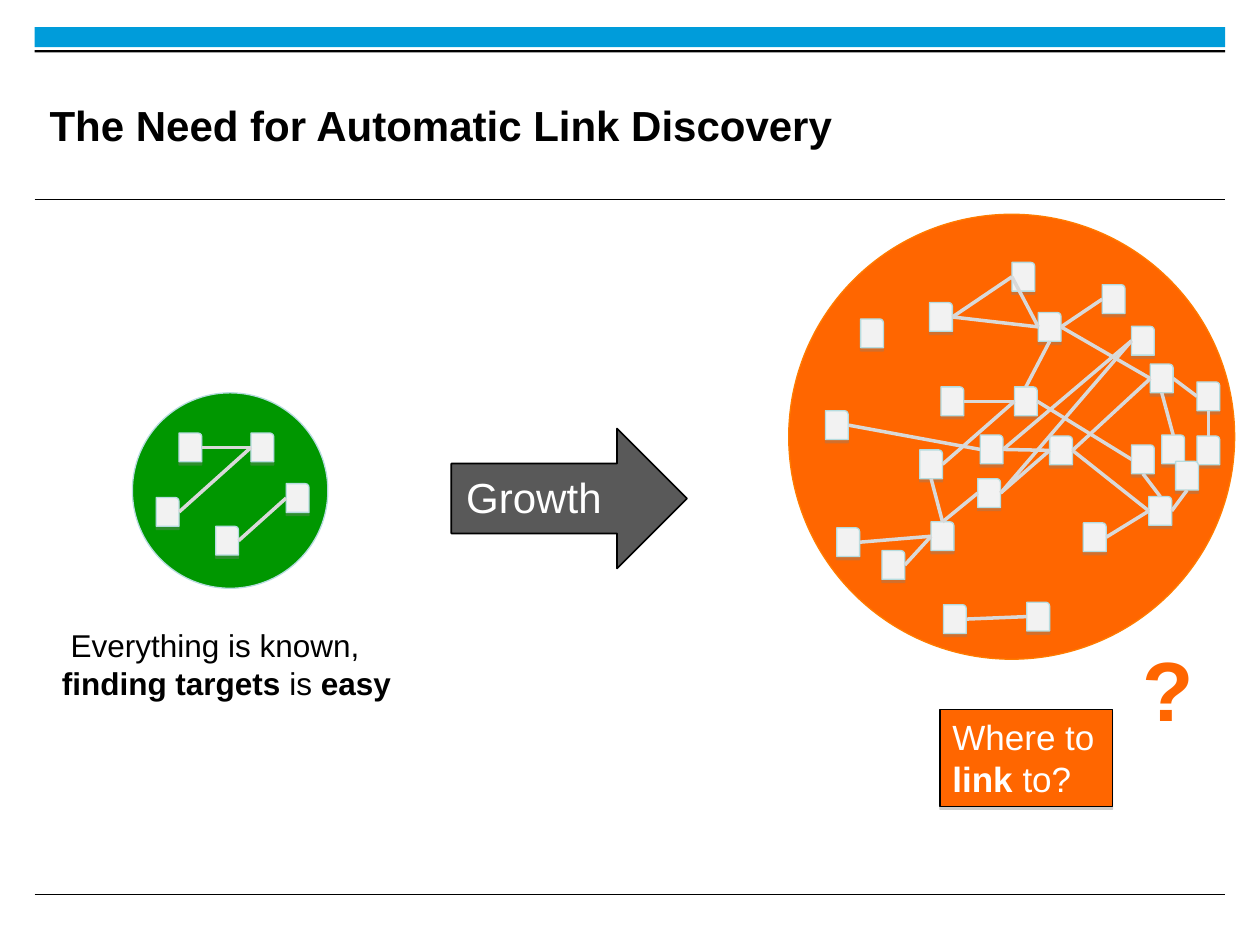
from lxml import etree
from pptx import Presentation
from pptx import util as u
from pptx.dml.color import RGBColor
from pptx.enum import shapes, text
from pptx.oxml import ns

SITES = {"t": 0, "l": 1, "b": 2, "r": 3}
KNOWN_PAGES = {"a": (2.39, 0.81), "b": (1.68, 2.69), "c": (0.48, 2.11),
               "d": (3.1, 1.83), "e": (0.94, 0.81)}
KNOWN_LINKS = "er-al cr-al br-dl"
GROWN_PAGES = {
    "a": (4.55, 3.48), "b": (3.81, 5.33), "c": (2.64, 4.75), "d": (5.26, 4.47),
    "e": (3.07, 3.48), "f": (3.86, 4.45), "g": (5.94, 6.22), "h": (8.23, 3.38),
    "i": (2.84, 1.78), "j": (6.91, 2.26), "k": (3.12, 7.87), "l": (6.32, 1.42),
    "m": (7.29, 3.02), "n": (6.91, 4.65), "o": (5.03, 1.98), "p": (4.5, 0.97),
    "q": (4.8, 7.82), "r": (7.52, 4.45), "s": (8.23, 4.47), "t": (1.45, 2.11),
    "u": (7.26, 5.69), "v": (7.8, 4.98), "w": (2.87, 6.2), "x": (0.74, 3.96),
    "y": (1.88, 6.78), "z": (0.97, 6.32)}
GROWN_LINKS = ("er-al cr-al br-dl ut-nb fr-dl dr-ul or-ll ir-ol ob-at vb-ur "
               "mr-hl rt-mb st-hb kr-ql yr-wl zr-wl wt-cb wt-bl xr-fl fr-jl "
               "jl-br gr-ul pl-ir ml-or ar-nl pl-ol dr-ml")


def rgb(color):
    """Turn a hex string into a colour."""
    return RGBColor.from_string(color)


def add_shape(s, kind, box, fill, line=None, width=0.75):
    """Add a flat preset shape."""
    sp = s.shapes.add_shape(kind, *map(u.Cm, box))
    sp.shadow.inherit = False
    sp.fill.solid()
    sp.fill.fore_color.rgb = rgb(fill)
    if line:
        sp.line.color.rgb = rgb(line)
        sp.line.width = u.Pt(width)
    else:
        sp.line.fill.background()
    return sp


def add_shadow(sp, points, opacity):
    """Give a flat shape a grey shadow below it."""
    effects = sp._element.spPr.find(ns.qn("a:effectLst"))
    shadow = etree.SubElement(effects, ns.qn("a:outerShdw"), blurRad="0",
                              dist=str(u.Pt(points)), dir="5400000", rotWithShape="0")
    color = etree.SubElement(shadow, ns.qn("a:srgbClr"), val="808080")
    etree.SubElement(color, ns.qn("a:alpha"), val=str(opacity * 1000))


def add_line(s, start, end, color, width):
    """Add a straight connector without a shadow."""
    ends = map(u.Cm, (*start, *end))
    cxn = s.shapes.add_connector(shapes.MSO_CONNECTOR.STRAIGHT, *ends)
    cxn.line.color.rgb = rgb(color)
    cxn.line.width = u.Pt(width)
    etree.SubElement(cxn._element.spPr, ns.qn("a:effectLst"))
    return cxn


def write(sp, parts, size, color, wrap=True):
    """Write one left-aligned paragraph from (text, bold) parts."""
    tf = sp.text_frame
    tf.word_wrap = wrap
    tf.vertical_anchor = text.MSO_ANCHOR.TOP
    p = tf.paragraphs[0]
    p.alignment = text.PP_ALIGN.LEFT
    for words, bold in parts:
        r = p.add_run()
        r.text = words
        r.font.name, r.font.size, r.font.bold = "Arial", u.Pt(size), bold
        r.font.color.rgb = rgb(color)


def add_text(s, box, parts, size, color, wrap=True):
    """Add a text box."""
    write(s.shapes.add_textbox(*map(u.Cm, box)), parts, size, color, wrap)


def frame(s, box):
    """Draw the top band and the rules across the page."""
    x, y, w, h = box
    add_shape(s, shapes.MSO_SHAPE.RECTANGLE, (x, y, w, 0.4), "009CDA")
    add_shape(s, shapes.MSO_SHAPE.RECTANGLE, (x, y + 0.46, w, 0.05), "000000")
    for rule in (y + 3.48, y + h):
        add_line(s, (x, rule), (x + w, rule), "000000", 0.6)


def title(s, box):
    """Place and format the title placeholder."""
    sp = s.shapes.title
    sp.left, sp.top, sp.width, sp.height = map(u.Cm, box)
    tf = sp.text_frame
    tf.text = "The Need for Automatic Link Discovery"
    tf.margin_left = tf.margin_top = tf.margin_right = tf.margin_bottom = 0
    tf.vertical_anchor = text.MSO_ANCHOR.MIDDLE
    p = tf.paragraphs[0]
    p.alignment = text.PP_ALIGN.LEFT
    font = p.runs[0].font
    font.name, font.size, font.bold = "Arial", u.Pt(24), True
    font.color.rgb = rgb("000000")


def web(s, box, fill, line, places, links):
    """Draw a circle of pages joined by links between their sides."""
    x, y = box[:2]
    add_shape(s, shapes.MSO_SHAPE.OVAL, box, fill, line)
    pages = {}
    for name, (dx, dy) in places.items():
        page = add_shape(s, shapes.MSO_SHAPE.ROUND_1_RECTANGLE,
                         (x + dx, y + dy, 0.46, 0.58), "F2F2F2", "B6DCDF")
        add_shadow(page, 1.8, 35)
        pages[name] = page
    for link in links.split():
        start, end = link.split("-")
        cxn = add_line(s, (x, y), (x, y), "D9D9D9", 2)
        cxn.begin_connect(pages[start[0]], SITES[start[1]])
        cxn.end_connect(pages[end[0]], SITES[end[1]])


def growth(s, box):
    """Draw the arrow with its label."""
    x, y = box[:2]
    add_shape(s, shapes.MSO_SHAPE.RIGHT_ARROW, box, "595959", "000000", 1)
    label = add_shape(s, shapes.MSO_SHAPE.RECTANGLE,
                      (x + 0.05, y + 0.74, 3.28, 1.28), "595959")
    write(label, [("Growth", False)], 24, "FFFFFF", wrap=False)


def question(s, box):
    """Draw the boxed question and the question mark beside it."""
    x, y, w, h = box
    sp = add_shape(s, shapes.MSO_SHAPE.RECTANGLE, (x, y + h - 1.96, 3.48, 1.96),
                   "FF6600", "000000")
    add_shadow(sp, 1.6, 38)
    write(sp, [("Where to ", False), ("link ", True), ("to?", False)], 20, "FFFFFF")
    add_text(s, (x + w - 1.55, y, 1.55, 2.31), [("?", True)], 48, "FF6600", wrap=False)


def main():
    """Build the slide."""
    prs = Presentation()
    prs.slide_width, prs.slide_height = u.Cm(25.4), u.Cm(19.05)
    s = prs.slides.add_slide(prs.slide_layouts[5])
    frame(s, (0.7, 0.55, 24, 17.48))
    title(s, (1, 1.35, 19.1, 2.34))
    add_text(s, (1, 12.5, 7.29, 1.8),
             [(" ", True), ("Everything is known, ", False), ("finding targets ", True),
              ("is ", False), ("easy", True)], 18, "000000")
    web(s, (2.67, 7.92, 3.94, 3.94), "009700", "B6DCDF", KNOWN_PAGES, KNOWN_LINKS)
    web(s, (15.9, 4.32, 8.99, 8.97), "FF6600", "FF7C00", GROWN_PAGES, GROWN_LINKS)
    question(s, (18.95, 12.73, 5.38, 3.53))
    growth(s, (9.1, 8.64, 4.75, 2.82))
    prs.save("out.pptx")


if __name__ == "__main__":
    main()
